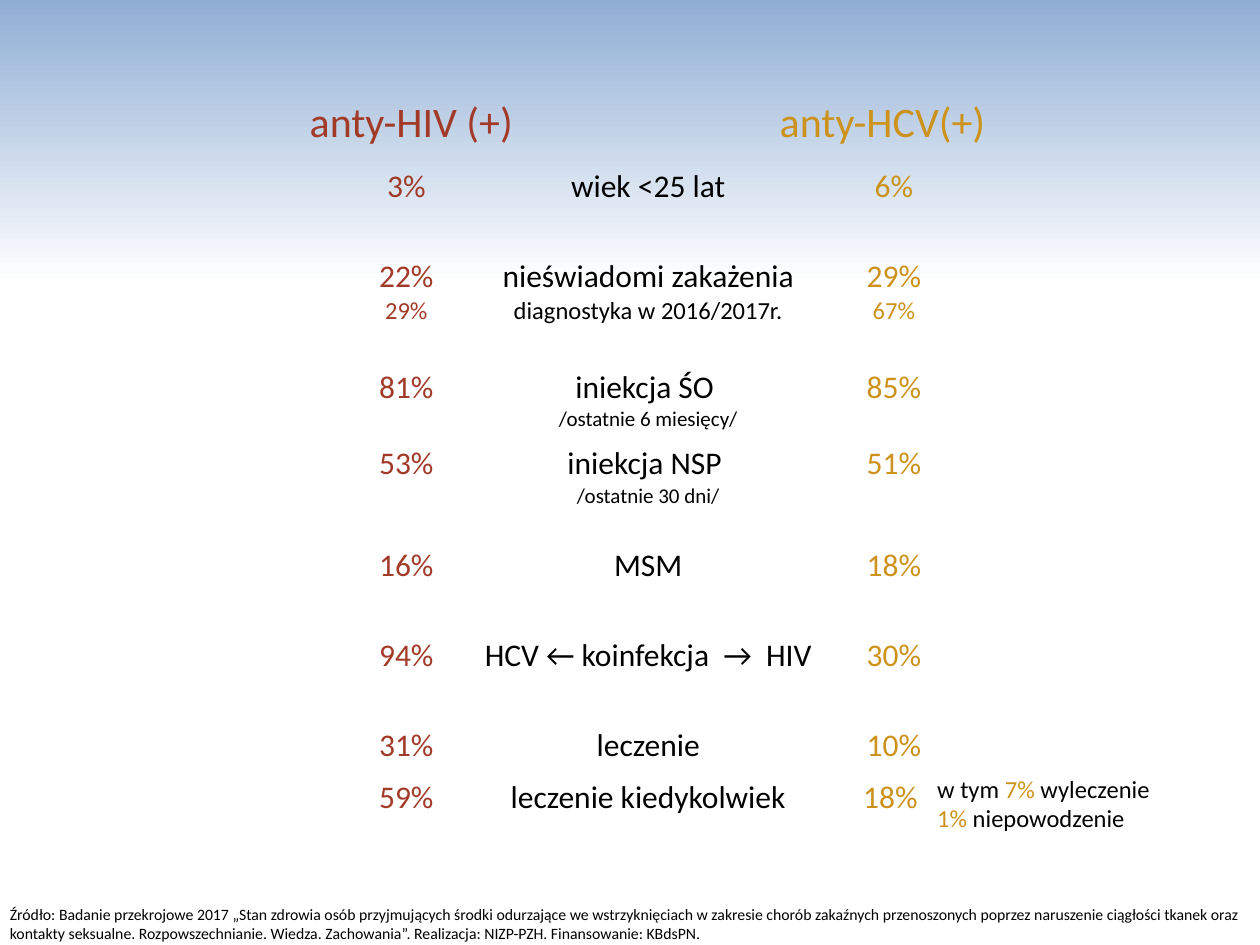
import pptx
import pptx.dml.color
import pptx.enum.text
import pptx.oxml.ns
import pptx.util

theme = {
    "font": "Calibri",
    "hiv": "A23A28", "hcv": "CD921B", "ink": "000000",
    "sky": "8FAED4", "paper": "FFFFFF",
    "heading": 24, "body": 18, "detail": 14, "period": 12, "source": 9,
    "no_grid": "{2D5ABB26-0587-4C30-8999-92F81FD0307C}",
}

deck = pptx.Presentation()
deck.slide_width = pptx.util.Inches(10)
deck.slide_height = pptx.util.Inches(7.5)
page = deck.slides.add_slide(deck.slide_layouts[6])


def share(left, top, width, height):
    return [int(part * whole) for part, whole in zip(
        (left, top, width, height), (deck.slide_width, deck.slide_height) * 2)]


def write(paragraph, text, size="body", color="ink", align="LEFT"):
    paragraph.alignment = getattr(pptx.enum.text.PP_ALIGN, align)
    run = paragraph.add_run()
    run.text = text
    run.font.name = theme["font"]
    run.font.size = pptx.util.Pt(theme[size])
    run.font.color.rgb = pptx.dml.color.RGBColor.from_string(theme[color])


backdrop = page.background.fill
backdrop.gradient()
backdrop.gradient_angle = 90
for stop, position, shade in zip(backdrop.gradient_stops, (0.7, 1), ("paper", "sky")):
    stop.position = position
    stop.color.rgb = pptx.dml.color.RGBColor.from_string(theme[shade])

comparison = [
    (0.055, []),
    (0.095, [("3%", "wiek <25 lat", "6%", "body")]),
    (0.117, [("22%", "nieświadomi zakażenia", "29%", "body"),
             ("29%", "diagnostyka w 2016/2017r.", "67%", "detail")]),
    (0.081, [("81%", "iniekcja ŚO ", "85%", "body"),
             ("", "/ostatnie 6 miesięcy/", "", "period")]),
    (0.108, [("53%", "iniekcja NSP ", "51%", "body"),
             ("", "/ostatnie 30 dni/", "", "period")]),
    (0.095, [("16%", "MSM", "18%", "body")]),
    (0.095, [("94%", "HCV ← koinfekcja  →  HIV", "30%", "body")]),
    (0.055, [("31%", "leczenie", "10%", "body")]),
    (0.055, [("59%", "leczenie kiedykolwiek", "18% ", "body")]),
]
column_shares = (0.069, 0.315, 0.075)
column_colors = ("hiv", "ink", "hcv")

results = page.shapes.add_table(
    len(comparison), len(column_shares),
    *share(0.288, 0.116, sum(column_shares), sum(row[0] for row in comparison))).table
results.first_row = results.horz_banding = False
results._tbl.tblPr.find(pptx.oxml.ns.qn("a:tableStyleId")).text = theme["no_grid"]
for column, width in zip(results.columns, column_shares):
    column.width = int(width * deck.slide_width)
for row, (height, lines) in zip(results.rows, comparison):
    row.height = int(height * deck.slide_height)
    for index, cell in enumerate(row.cells):
        cell.fill.background()
        entries = [(line[index], line[3]) for line in lines if line[index]]
        for order, (entry, size) in enumerate(entries):
            paragraph = cell.text_frame.add_paragraph() if order else cell.text_frame.paragraphs[0]
            write(paragraph, entry, size=size, color=column_colors[index], align="CENTER")

source = (
    "Źródło: Badanie przekrojowe 2017 „Stan zdrowia osób przyjmujących środki odurzające "
    "we wstrzyknięciach w zakresie chorób zakaźnych przenoszonych poprzez naruszenie "
    "ciągłości tkanek oraz kontakty seksualne. Rozpowszechnianie. Wiedza. Zachowania”. "
    "Realizacja: NIZP-PZH. Finansowanie: KBdsPN."
)
captions = [
    ((0.734, 0.812, 0.25, 0.076), "detail",
     [[("w tym ", "ink"), ("7%", "hcv"), (" wyleczenie", "ink")],
      [("1%", "hcv"), (" niepowodzenie", "ink")]]),
    ((0.609, 0.095, 0.25, 0.067), "heading", [[("anty-HCV(+)", "hcv")]]),
    ((0.236, 0.095, 0.25, 0.067), "heading", [[("anty-HIV (+)", "hiv")]]),
    ((-0.002, 0.951, 1, 0.053), "source", [[(source, "ink")]]),
]
for place, size, lines in captions:
    caption = page.shapes.add_textbox(*share(*place)).text_frame
    caption.word_wrap = True
    caption.auto_size = pptx.enum.text.MSO_AUTO_SIZE.SHAPE_TO_FIT_TEXT
    for order, line in enumerate(lines):
        paragraph = caption.add_paragraph() if order else caption.paragraphs[0]
        for text, color in line:
            write(paragraph, text, size=size, color=color)

deck.save("out.pptx")
